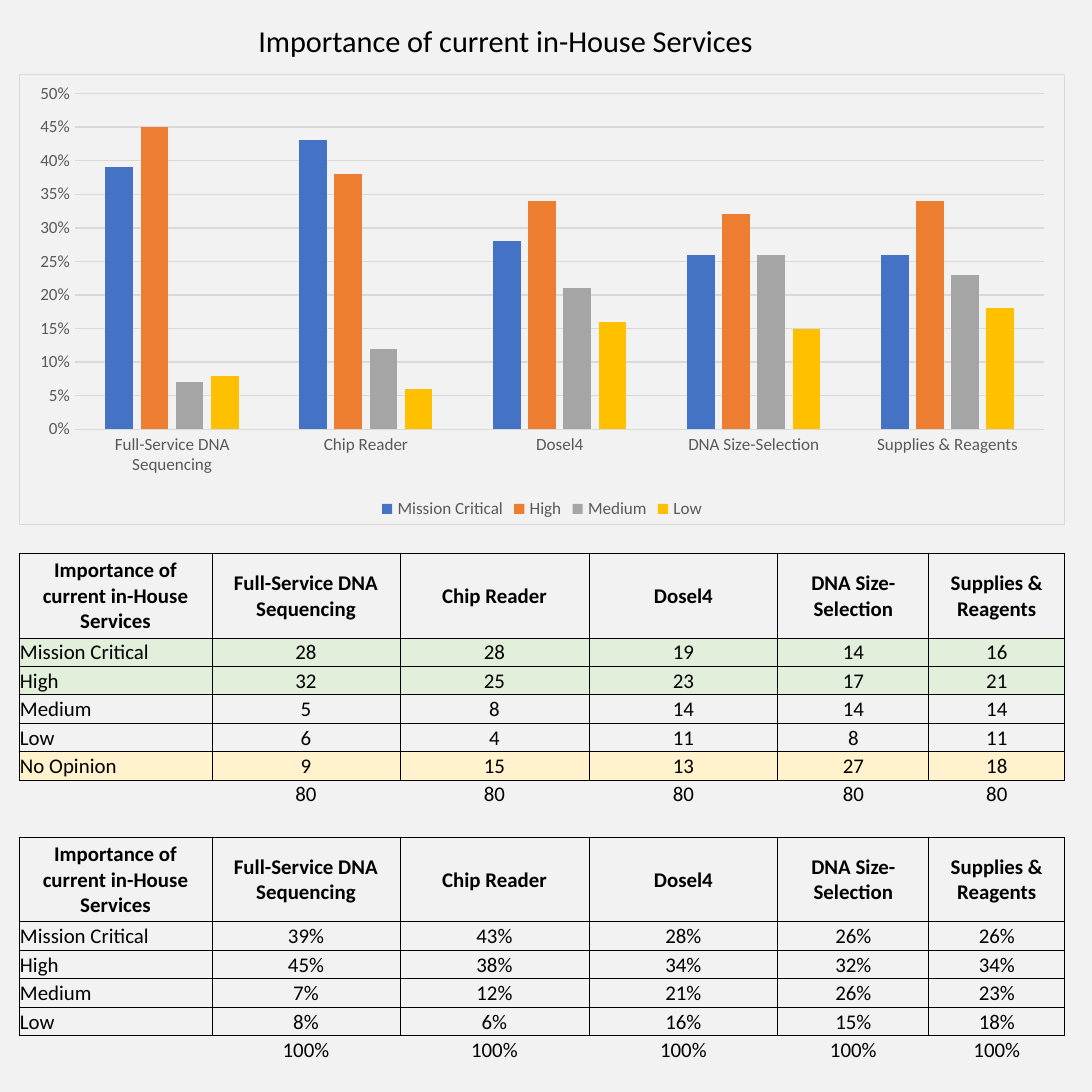
from pptx import Presentation, util as u
from pptx.chart.data import CategoryChartData
from pptx.dml.color import RGBColor
from pptx.enum import chart as charts, text
from pptx.oxml import parse_xml
from pptx.oxml.ns import nsdecls, qn
from lxml import etree

# Content
TITLE = "Importance of current in-House Services"
SERVICES = ["Full-Service DNA Sequencing", "Chip Reader", "Dosel4",
            "DNA Size-Selection", "Supplies & Reagents"]
COUNTS = [
    ("Mission Critical", [28, 28, 19, 14, 16], "green"),
    ("High", [32, 25, 23, 17, 21], "green"),
    ("Medium", [5, 8, 14, 14, 14], None),
    ("Low", [6, 4, 11, 8, 11], None),
    ("No Opinion", [9, 15, 13, 27, 18], "cream"),
]
PERCENTS = [
    ("Mission Critical", [39, 43, 28, 26, 26], "blue"),
    ("High", [45, 38, 34, 32, 34], "orange"),
    ("Medium", [7, 12, 21, 26, 23], "gray"),
    ("Low", [8, 6, 16, 15, 18], "yellow"),
]
COLORS = {
    "page": "F2F2F2", "black": "000000", "label": "595959", "grid": "D9D9D9",
    "green": "E2EFDA", "cream": "FFF2CC",
    "blue": "4472C4", "orange": "ED7D31", "gray": "A5A5A5", "yellow": "FFC000",
}
FONT = "Calibri"

# Geometry in px
SCALE = 914400 / 136.5
PAGE = 1092
TITLE_BOX = (245, 0, 569, 86)
CHART_BOX = (19, 74, 1046, 451)
PLOT_BOX = (74, 93, 971, 337)
TABLE_LEFT, TABLE_TOP = 19, 553
COLUMNS = [193, 188, 189, 189, 151, 136]
HEADER, BLOCK = 85, 284          # a block is one header and seven body rows
BODY = (BLOCK - HEADER) / 7


def emu(px):
    return u.Emu(round(px * SCALE))


def rgb(name):
    return RGBColor.from_string(COLORS[name])


def style_font(font, size, color="black", bold=False):
    font.name, font.size, font.bold = FONT, u.Pt(size), bold
    font.color.rgb = rgb(color)


def style_line(line, color):
    line.color.rgb = rgb(color)
    line.width = u.Pt(0.75)


def add_title(page):
    box = page.shapes.add_textbox(*map(emu, TITLE_BOX))
    frame = box.text_frame
    frame.word_wrap = True
    frame.vertical_anchor = text.MSO_ANCHOR.MIDDLE
    para = frame.paragraphs[0]
    para.line_spacing = 0.9
    span = para.add_run()
    span.text = TITLE
    style_font(span.font, 16)


def add_importance_chart(page):
    data = CategoryChartData(number_format="0%")
    data.categories = SERVICES
    for name, values, _ in PERCENTS:
        data.add_series(name, [value / 100 for value in values])
    chart = page.shapes.add_chart(charts.XL_CHART_TYPE.COLUMN_CLUSTERED,
                                  *map(emu, CHART_BOX), data).chart
    style_font(chart.font, 10)
    chart.has_title = False

    # Bars
    plot = chart.plots[0]
    plot.gap_width, plot.overlap, plot.vary_by_categories = 219, -27, False
    for series, (_, _, color) in zip(plot.series, PERCENTS):
        series.format.fill.solid()
        series.format.fill.fore_color.rgb = rgb(color)

    # Axes and legend
    for axis in (chart.category_axis, chart.value_axis):
        axis.major_tick_mark = axis.minor_tick_mark = charts.XL_TICK_MARK.NONE
        style_font(axis.tick_labels.font, 9, "label")
    style_line(chart.category_axis.format.line, "grid")
    scale = chart.value_axis
    scale.minimum_scale, scale.maximum_scale, scale.major_unit = 0, 0.5, 0.05
    scale.tick_labels.number_format = "0%"
    scale.tick_labels.number_format_is_linked = False
    scale.format.line.fill.background()
    style_line(scale.major_gridlines.format.line, "grid")
    chart.has_legend = True
    chart.legend.position = charts.XL_LEGEND_POSITION.BOTTOM
    chart.legend.include_in_layout = False
    style_font(chart.legend.font, 9, "label")

    # Frame and plot position
    chart.element.find(qn("c:chart")).addnext(parse_xml(
        f'<c:spPr {nsdecls("c", "a")}><a:noFill/><a:ln w="9525"><a:solidFill>'
        f'<a:srgbClr val="{COLORS["grid"]}"/></a:solidFill></a:ln></c:spPr>'))
    left, top, width, height = CHART_BOX
    x, y, w, h = PLOT_BOX
    parts = {"x": (x - left) / width, "y": (y - top) / height,
             "w": w / width, "h": h / height}
    area = chart.element.find(".//" + qn("c:plotArea"))
    for layout in area.findall(qn("c:layout")):
        area.remove(layout)
    area.insert(0, parse_xml(
        f'<c:layout {nsdecls("c")}><c:manualLayout><c:layoutTarget val="inner"/>'
        '<c:xMode val="edge"/><c:yMode val="edge"/>'
        + "".join(f'<c:{key} val="{part:.3f}"/>' for key, part in parts.items())
        + "</c:manualLayout></c:layout>"))


def table_rows():
    """Each row: texts, kind, fill."""
    header = ([TITLE] + SERVICES, "header", None)
    return [
        header,
        *[([name, *map(str, values)], "body", fill) for name, values, fill in COUNTS],
        ([""] + ["80"] * len(SERVICES), "total", None),
        ([""] * len(COLUMNS), "gap", None),
        header,
        *[([name, *(f"{value}%" for value in values)], "body", None)
          for name, values, _ in PERCENTS],
        ([""] + ["100%"] * len(SERVICES), "total", None),
    ]


def fill_cell(cell, words, kind, fill, centered):
    cell.margin_left = cell.margin_right = cell.margin_top = emu(1)
    cell.margin_bottom = 0
    cell.vertical_anchor = text.MSO_ANCHOR.MIDDLE
    properties = cell._tc.get_or_add_tcPr()
    ruled = {"total": "T", "gap": "B"}.get(kind, "LRTB")
    ink = f'<a:solidFill><a:srgbClr val="{COLORS["black"]}"/></a:solidFill>'
    for edge in "LRTB":
        properties.append(parse_xml(
            f'<a:ln{edge} {nsdecls("a")} w="6350">'
            f'{ink if edge in ruled else "<a:noFill/>"}</a:ln{edge}>'))
    if fill:
        cell.fill.solid()
        cell.fill.fore_color.rgb = rgb(fill)
    else:
        cell.fill.background()
    para = cell.text_frame.paragraphs[0]
    if not words:
        etree.SubElement(para._p, qn("a:endParaRPr"), sz="1100")
        return
    para.alignment = text.PP_ALIGN.CENTER if centered else text.PP_ALIGN.LEFT
    span = para.add_run()
    span.text = words
    style_font(span.font, 11, bold=kind == "header")


def add_importance_table(page):
    rows = table_rows()
    heights = [HEADER if kind == "header" else BODY for _, kind, _ in rows]
    table = page.shapes.add_table(
        len(rows), len(COLUMNS), emu(TABLE_LEFT), emu(TABLE_TOP),
        emu(sum(COLUMNS)), emu(sum(heights))).table
    table.first_row = table.horz_banding = False
    style = table._tbl.tblPr.find(qn("a:tableStyleId"))
    style.text = "{2D5ABB26-0587-4C30-8999-92F81FD0307C}"  # no style, no grid
    for column, width in zip(table.columns, COLUMNS):
        column.width = emu(width)
    for r, (texts, kind, fill) in enumerate(rows):
        table.rows[r].height = emu(heights[r])
        for c, words in enumerate(texts):
            fill_cell(table.cell(r, c), words, kind, fill, c > 0 or kind == "header")


def main():
    deck = Presentation()
    deck.slide_width = deck.slide_height = emu(PAGE)
    page = deck.slides.add_slide(deck.slide_layouts[6])
    page.background.fill.solid()
    page.background.fill.fore_color.rgb = rgb("page")
    add_importance_chart(page)
    add_importance_table(page)
    add_title(page)
    deck.save("out.pptx")


if __name__ == "__main__":
    main()
